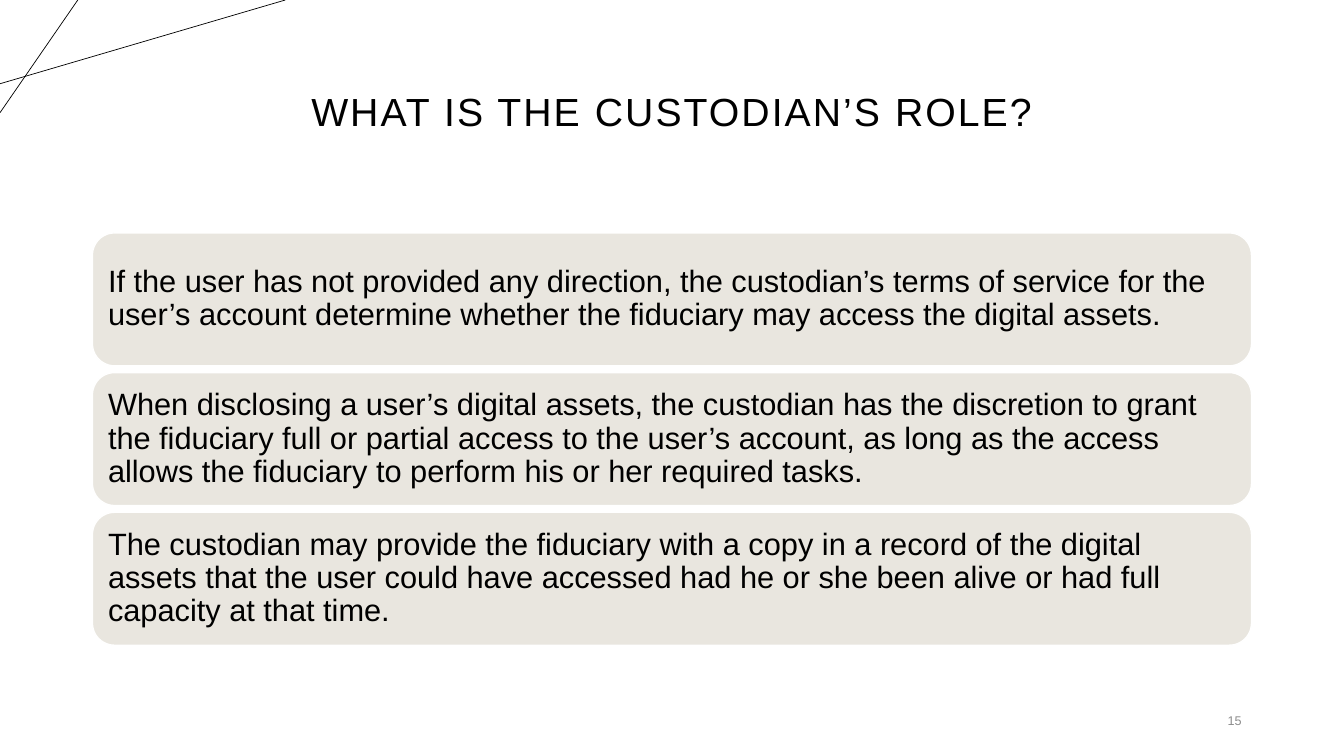
import pptx
import pptx.util
import pptx.dml.color
import pptx.enum.shapes
import pptx.enum.text
from lxml import etree
from pptx.util import Cm, Pt

TITLE = "WHAT IS THE CUSTODIAN’S ROLE?"
PAGE = "15"
POINTS = [
    "If the user has not provided any direction, the custodian’s terms of service for the user’s account determine whether the fiduciary may access the digital assets.",
    "When disclosing a user’s digital assets, the custodian has the discretion to grant the fiduciary full or partial access to the user’s account, as long as the access allows the fiduciary to perform his or her required tasks.",
    "The custodian may provide the fiduciary with a copy in a record of the digital assets that the user could have accessed had he or she been alive or had full capacity at that time.",
]
CORNER_LINES = [(0, 2.11, 7.19, 0), (1.96, 0, 0, 2.84)]
LEFT, WIDTH = 2.33, 29.21
CARD_TOP, CARD_HEIGHT, CARD_PITCH = 5.87, 3.35, 3.52
INSET = 0.23
ALIGN = pptx.enum.text.PP_ALIGN


def color(value):
    return pptx.dml.color.RGBColor.from_string(value)


def write(sp, text, size, align, hex_color="000000", spacing=0.9):
    tf = sp.text_frame
    frame_format = {
        "word_wrap": True,
        "auto_size": pptx.enum.text.MSO_AUTO_SIZE.NONE,
        "vertical_anchor": pptx.enum.text.MSO_ANCHOR.MIDDLE,
    }
    for name, value in frame_format.items():
        setattr(tf, name, value)
    p = tf.paragraphs[0]
    p.alignment = align
    p.line_spacing = spacing
    r = p.add_run()
    r.text = text
    for name, value in {"name": "Arial", "size": Pt(size)}.items():
        setattr(r.font, name, value)
    r.font.color.rgb = color(hex_color)
    return r


def add_corner_line(s, ends):
    line = s.shapes.add_connector(
        pptx.enum.shapes.MSO_CONNECTOR.STRAIGHT, *[Cm(v) for v in ends])
    line.line.color.rgb = color("000000")
    line.line.width = Pt(0.5)
    etree.SubElement(line._element.spPr, pptx.oxml.ns.qn("a:effectLst"))


def add_card(s, index, text):
    sp = s.shapes.add_shape(
        pptx.enum.shapes.MSO_SHAPE.ROUNDED_RECTANGLE,
        Cm(LEFT), Cm(CARD_TOP + index * CARD_PITCH), Cm(WIDTH), Cm(CARD_HEIGHT))
    sp.shadow.inherit = False
    sp.fill.solid()
    sp.fill.fore_color.rgb = color("E9E6DF")
    sp.line.color.rgb = color("FFFFFF")
    sp.line.width = Pt(1)
    for side in ("left", "top", "right", "bottom"):
        setattr(sp.text_frame, "margin_" + side, Cm(INSET))
    write(sp, text, 22, ALIGN.LEFT)


def main():
    prs = pptx.Presentation()
    prs.slide_width, prs.slide_height = Cm(33.87), Cm(19.05)
    s = prs.slides.add_slide(prs.slide_layouts[5])

    for ends in CORNER_LINES:
        add_corner_line(s, ends)

    title = s.shapes.title
    place = {"left": LEFT, "top": 1.02, "width": WIDTH, "height": 3.68}
    for name, value in place.items():
        setattr(title, name, Cm(value))
    r = write(title, TITLE, 28, ALIGN.CENTER)
    r.font._element.set("spc", "150")

    for index, text in enumerate(POINTS):
        add_card(s, index, text)

    number = s.shapes.add_textbox(Cm(23.92), Cm(17.65), Cm(7.62), Cm(1.02))
    write(number, PAGE, 9, ALIGN.RIGHT, "8C8C8C", 1.0)

    prs.save("out.pptx")


if __name__ == "__main__":
    main()
